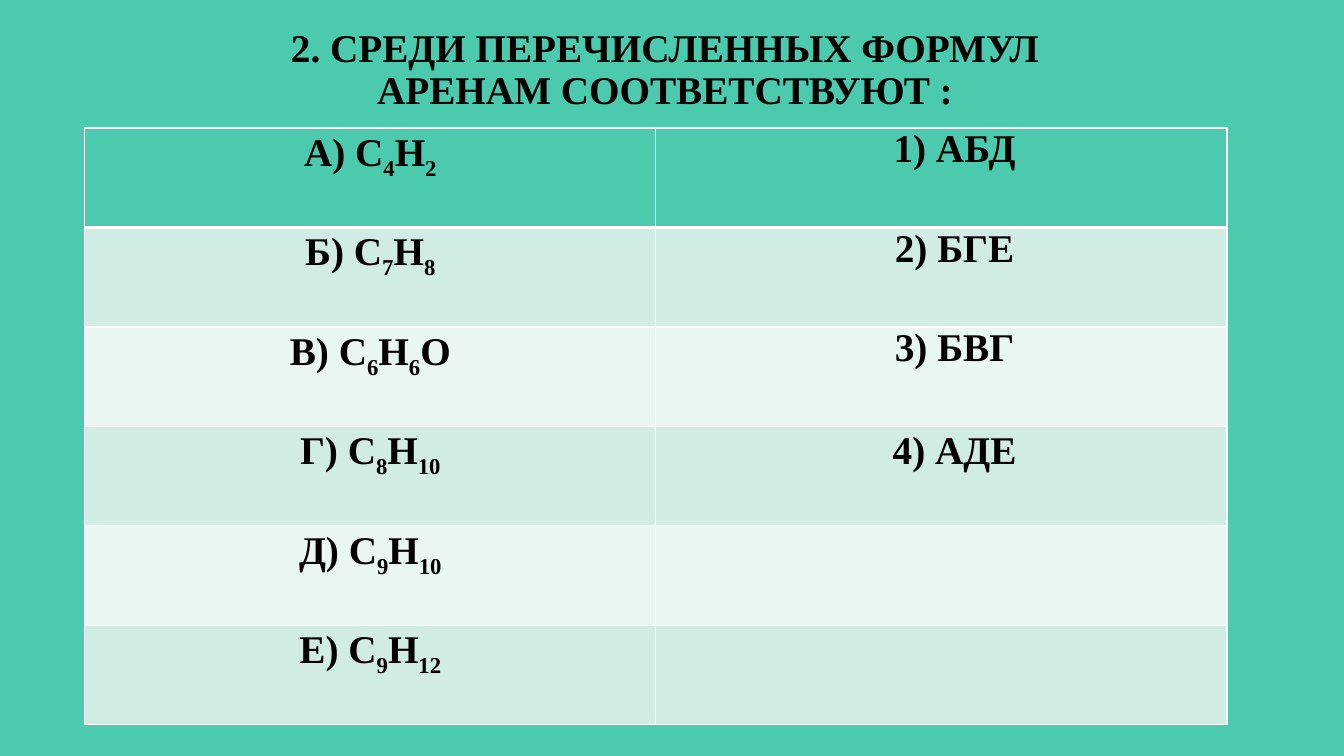
from lxml.etree import SubElement
from pptx import Presentation
from pptx.dml.color import RGBColor
from pptx.enum.text import MSO_ANCHOR as Anchor, PP_ALIGN as Align
from pptx.oxml.ns import qn
from pptx.util import Inches, Pt

TEAL, PALE, LIGHT, WHITE, BLACK = "4BCAAD", "D0ECE3", "E9F6F1", "FFFFFF", "000000"
TEXT_FORMAT = {"name": "Times New Roman", "size": Pt(28), "bold": True}
# Every second piece between the bars is a subscript.
FORMULAS = ["А) C|4|H|2", "Б) C|7|H|8", "В) C|6|H|6|О",
            "Г) C|8|H|10", "Д) C|9|H|10", "Е) C|9|H|12"]
ANSWERS = ["1) АБД", "2) БГЕ", "3) БВГ", "4) АДЕ", "", ""]


def paint(color_format, value):
    color_format.rgb = RGBColor.from_string(value)


def write(para, text, spacing):
    """Write centred text, lowering every second piece between bars."""
    para.alignment = Align.CENTER
    para.line_spacing = spacing
    para.text = ""
    for index, piece in enumerate(text.split("|")):
        span = para.add_run()
        span.text = piece
        for key, value in TEXT_FORMAT.items():
            setattr(span.font, key, value)
        paint(span.font.color, BLACK)
        if index % 2:
            span._r.get_or_add_rPr().set("baseline", "-25000")


deck = Presentation()
deck.slide_width, deck.slide_height = Inches(13.33), Inches(7.5)
page = deck.slides.add_slide(deck.slide_layouts[6])
page.background.fill.solid()
paint(page.background.fill.fore_color, TEAL)

# Title
box = page.shapes.add_textbox(Inches(0.93), Inches(0.13), Inches(11.33), Inches(1.75))
frame = box.text_frame
frame.word_wrap = True
frame.vertical_anchor = Anchor.TOP
frame.margin_top = Inches(0.15)
title = frame.paragraphs[0]
write(title, "2. СРЕДИ ПЕРЕЧИСЛЕННЫХ ФОРМУЛ", 0.9)
title.add_line_break()
second_line = frame.add_paragraph()
title._p.remove(title._p[-1])
write(second_line, "АРЕНАМ СООТВЕТСТВУЮТ :", 0.9)

# Table of formulas and answers
table = page.shapes.add_table(len(FORMULAS), 2, Inches(0.84), Inches(1.27),
                              Inches(11.33), Inches(5.92)).table
table.first_row = table.horz_banding = False
for row, texts in enumerate(zip(FORMULAS, ANSWERS)):
    for column, text in enumerate(texts):
        cell = table.cell(row, column)
        cell.margin_left = cell.margin_right = Inches(0.07)
        cell.margin_top = cell.margin_bottom = 0
        properties = cell._tc.get_or_add_tcPr()
        for side in "LRTB":
            under_header = (row, side) in [(0, "B"), (1, "T")]
            line = SubElement(properties, qn(f"a:ln{side}"), w=str(Pt(3 if under_header else 1)))
            SubElement(SubElement(line, qn("a:solidFill")), qn("a:srgbClr"), val=WHITE)
        cell.fill.solid()
        paint(cell.fill.fore_color, TEAL if row == 0 else PALE if row % 2 else LIGHT)
        if text:
            para = cell.text_frame.paragraphs[0]
            write(para, text, 1.0 if column and row < 3 else 1.07)
            if column:
                para._p.get_or_add_pPr().set("indent", str(Inches(0.26)))

deck.save("out.pptx")
